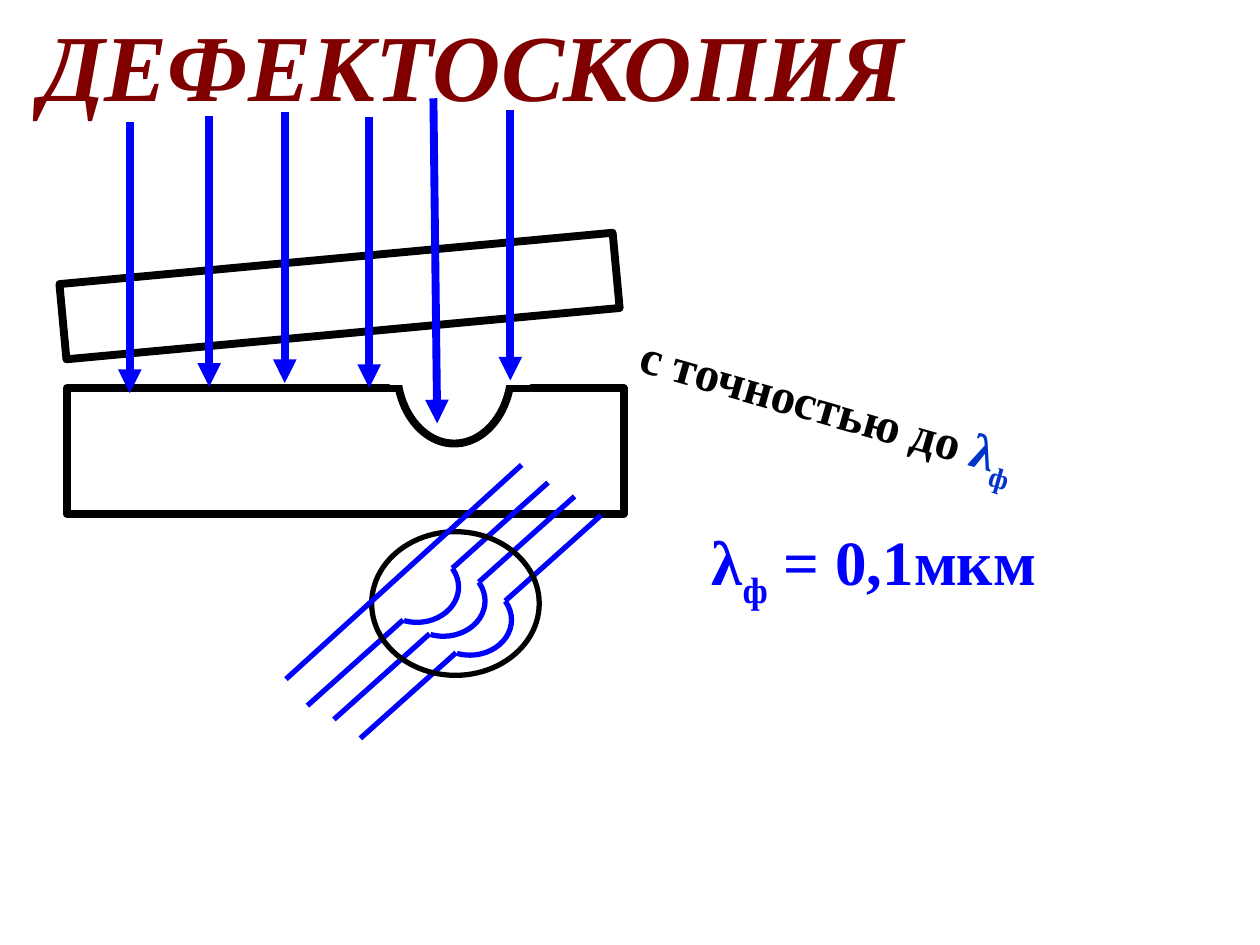
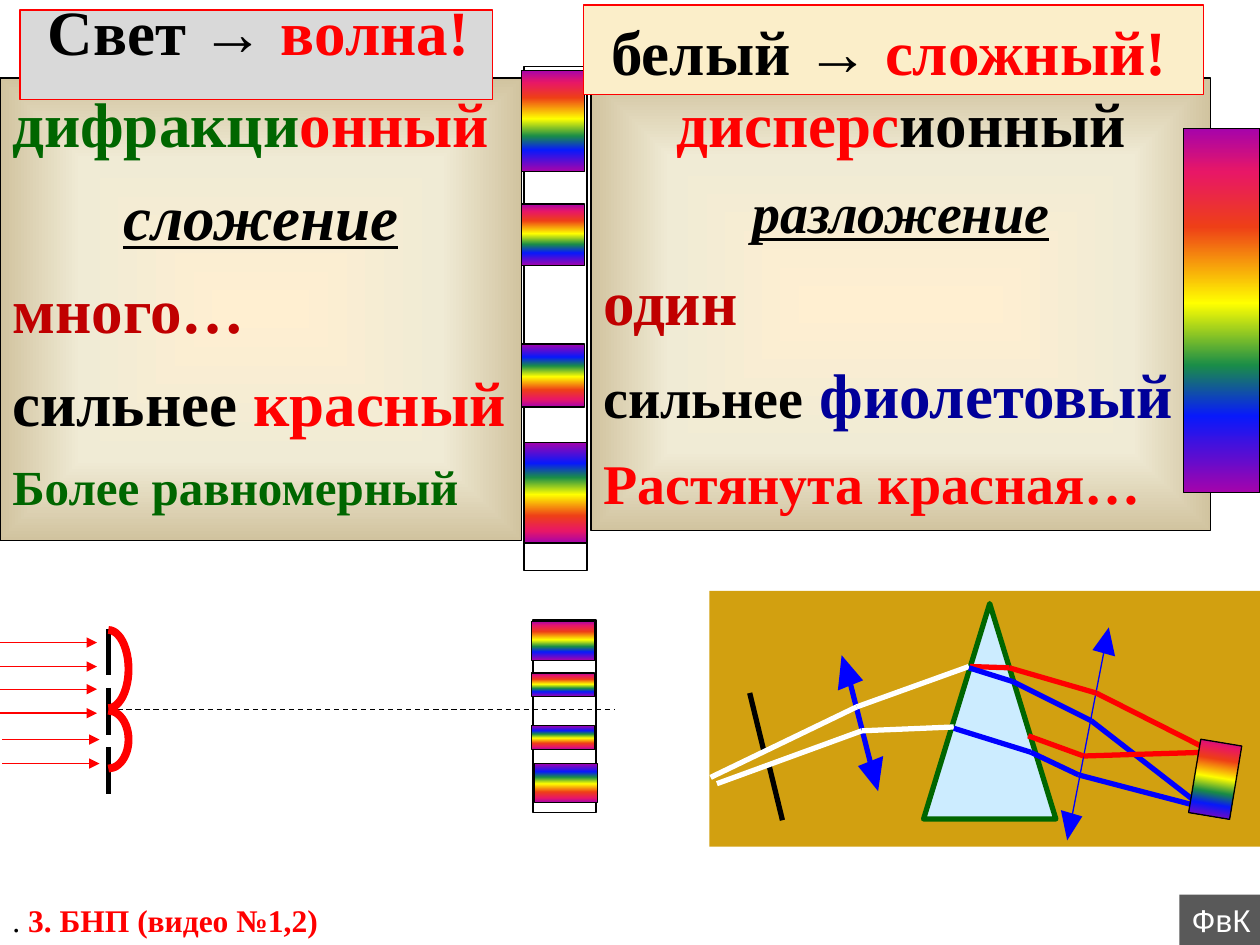
from dataclasses import dataclass
from itertools import pairwise

from lxml.etree import SubElement
from pptx import Presentation
from pptx.dml.color import RGBColor
from pptx.enum.dml import MSO_LINE_DASH_STYLE as Dash
from pptx.enum.shapes import MSO_CONNECTOR as Connector, MSO_SHAPE as Preset
from pptx.enum.text import MSO_ANCHOR as Anchor, PP_ALIGN as Align
from pptx.oxml.ns import qn
from pptx.util import Inches, Pt


@dataclass(frozen=True)
class Theme:
    """Colours, fonts, type sizes and line weights of both slides."""
    black: str = "000000"
    white: str = "FFFFFF"
    red: str = "FF0000"
    blue: str = "0000FF"
    green: str = "006600"
    crimson: str = "C00000"
    maroon: str = "800000"
    navy: str = "000099"
    lambda_blue: str = "0033CC"
    header_grey: str = "D9D9D9"
    header_cream: str = "FBEEC9"
    badge: str = "595959"
    bench: str = "D2A010"
    glass: str = "CCECFF"
    serif: str = "Times New Roman"
    sans: str = "Arial"
    title: int = 54
    large: int = 36
    medium: int = 32
    small: int = 28
    note: int = 18
    hair: float = 0.75
    ray: float = 3
    heavy: float = 4.5


T = Theme()
PARCHMENT = [(0, "FFEFD1"), (65, "F0EBD5"), (100, "D1C39F")]
VIOLET_FIRST = [(0, "A603AB"), (21, "0819FB"), (35, "1A8D48"), (52, "FFFF00"),
                (73, "EE3F17"), (88, "E81766"), (100, "A603AB")]
RED_FIRST = [(100 - position, color) for position, color in reversed(VIOLET_FIRST)]


def rgb(color):
    """Turn a hex string into a colour."""
    return RGBColor.from_string(color)


def paint_gradient(shape, stops, radial=False):
    """Fill a shape with a top-down or centre-out gradient."""
    shape.fill.gradient()
    gradient = shape._element.spPr.find(qn("a:gradFill"))
    for part in list(gradient):
        gradient.remove(part)
    stop_list = SubElement(gradient, qn("a:gsLst"))
    for position, color in stops:
        stop = SubElement(stop_list, qn("a:gs"), pos=str(position * 1000))
        SubElement(stop, qn("a:srgbClr"), val=color)
    if radial:
        center = SubElement(gradient, qn("a:path"), path="shape")
        SubElement(center, qn("a:fillToRect"), l="50000", t="50000", r="50000", b="50000")
    else:
        SubElement(gradient, qn("a:lin"), ang="5400000", scaled="0")


def dress(shape, fill, line, width):
    """Set fill, outline and absence of shadow."""
    shape.shadow.inherit = False
    if isinstance(fill, list):
        paint_gradient(shape, fill, radial=fill is PARCHMENT)
    elif fill:
        shape.fill.solid()
        shape.fill.fore_color.rgb = rgb(fill)
    else:
        shape.fill.background()
    if line:
        shape.line.color.rgb = rgb(line)
        shape.line.width = Pt(width)
    else:
        shape.line.fill.background()


def write(frame, paragraphs, anchor=Anchor.TOP, wrap=True, after=0):
    """Write paragraphs given as an alignment and a list of run tuples."""
    frame.word_wrap = wrap
    frame.vertical_anchor = anchor
    for index, (align, runs) in enumerate(paragraphs):
        paragraph = frame.paragraphs[0] if index == 0 else frame.add_paragraph()
        paragraph.alignment = align
        paragraph.space_after = Pt(after)
        for text, size, color, *style in runs:
            run = paragraph.add_run()
            run.text = text
            font = run.font
            font.size, font.color.rgb = Pt(size), rgb(color)
            font.name = T.sans if "sans" in style else T.serif
            font.bold = "plain" not in style
            font.italic = "italic" in style
            font.underline = "underline" in style
            if "sub" in style:
                run._r.get_or_add_rPr().set("baseline", "-28000")


@dataclass
class Region:
    """A part of a slide whose drawing calls are relative to its corner."""
    slide: object
    left: float = 0
    top: float = 0

    def place(self, x, y):
        """Convert a local point to slide lengths."""
        return Inches(self.left + x), Inches(self.top + y)

    def shape(self, x, y, width, height, fill=None, line=None, weight=T.hair,
              preset=Preset.RECTANGLE, rotation=0):
        """Add a preset shape."""
        shape = self.slide.shapes.add_shape(
            preset, *self.place(x, y), Inches(width), Inches(height))
        shape.rotation = rotation
        dress(shape, fill, line, weight)
        return shape

    def line(self, start, end, color, weight, arrow=False, dashed=False):
        """Add a straight line, with an arrowhead at its end if wanted."""
        line = self.slide.shapes.add_connector(
            Connector.STRAIGHT, *self.place(*start), *self.place(*end))
        line.line.color.rgb = rgb(color)
        line.line.width = Pt(weight)
        if dashed:
            line.line.dash_style = Dash.DASH
        if arrow:
            SubElement(line.line._get_or_add_ln(), qn("a:tailEnd"), type="triangle")
        SubElement(line._element.spPr, qn("a:effectLst"))

    def arc(self, center, radii, start, end, color, weight):
        """Add an elliptic arc running clockwise between two angles."""
        (x, y), (rx, ry) = center, radii
        arc = self.shape(x - rx, y - ry, 2 * rx, 2 * ry, None, color, weight, Preset.ARC)
        for index, angle in enumerate((start, end)):
            arc.adjustments[index] = angle * 0.6

    def polygon(self, points, fill):
        """Add a closed, filled outline."""
        first, *others = [self.place(*point) for point in points]
        builder = self.slide.shapes.build_freeform(*first)
        builder.add_line_segments(others)
        dress(builder.convert_to_shape(), fill, None, 0)

    def label(self, width, height, runs, rotation=0, **options):
        """Add a one-paragraph text box at the corner."""
        box = self.slide.shapes.add_textbox(
            *self.place(0, 0), Inches(width), Inches(height))
        box.rotation = rotation
        write(box.text_frame, [(Align.LEFT, runs)], **options)


def title(slide, text):
    """Place and format the title placeholder."""
    holder = slide.shapes.title
    holder.left, holder.top = Inches(0.22), Inches(0)
    holder.width, holder.height = Inches(7.13), Inches(1.01)
    write(holder.text_frame, [(Align.LEFT, [(text, T.title, T.maroon, "italic")])],
          Anchor.MIDDLE, wrap=False)


def tested_plates(region):
    """Draw the tilted plate and the plate with a pit."""
    region.shape(0, 0, 4.41, 0.6, T.white, T.black, T.heavy, rotation=354.7)
    region.shape(0.04, 1.03, 4.42, 1, T.white, T.black, T.heavy)
    pit = region.shape(2.82, 0.72, 0.59, 0.91, T.white, T.black, T.heavy, Preset.MOON, 270)
    pit.adjustments[0] = 0.875
    region.shape(2.61, 0.86, 1.1, 0.13, T.white, T.white, 2)


def falling_light(region):
    """Draw the beams that fall on the plates."""
    for x, y in [(0, 0.19), (0.63, 0.14), (1.23, 0.11), (1.9, 0.15), (3.02, 0.09)]:
        region.line((x, y), (x, y + 2.15), T.blue, T.heavy, arrow=True)
    region.line((2.41, 0), (2.44, 2.58), T.blue, T.heavy, arrow=True)


def bent_fringes(region):
    """Draw interference fringes that bend around the pit."""
    for dx, dy in [(0, 0), (0.21, 0.11), (0.42, 0.26)]:
        fringe = Region(region.slide, region.left + dx, region.top + dy)
        fringe.line((0.17, 1.91), (0.93, 1.23), T.blue, T.ray)
        fringe.line((1.32, 0.82), (2.08, 0.14), T.blue, T.ray)
        fringe.arc((1.04, 0.97), (0.33, 0.28), 332, 111, T.blue, T.ray)
    region.shape(0.68, 0.53, 1.33, 1.14, None, T.black, T.ray, Preset.OVAL)
    region.line((0, 1.7), (1.87, 0), T.blue, T.ray)


def flaw_detection_slide(deck):
    """Build the slide on flaw detection."""
    slide = deck.slides.add_slide(deck.slide_layouts[5])
    title(slide, "ДЕФЕКТОСКОПИЯ")
    tested_plates(Region(slide, 0.49, 2.05))
    falling_light(Region(slide, 1.03, 0.78))
    bent_fringes(Region(slide, 2.27, 3.69))
    Region(slide, 4.94, 2.95).label(3.35, 0.57, [
        ("с точностью до ", T.small, T.black), ("λ", T.small, T.lambda_blue),
        ("ф", T.small, T.lambda_blue, "sub")], rotation=15.9, wrap=False)
    Region(slide, 5.55, 4.14).label(2.97, 0.71, [
        ("λ", T.large, T.blue), ("ф", T.large, T.blue, "sub"),
        (" = 0,1мкм", T.large, T.blue)], anchor=Anchor.MIDDLE)


def spectrum_panel(region, width, height, paragraphs):
    """Draw a parchment panel listing the features of a spectrum."""
    panel = region.shape(0, 0, width, height, PARCHMENT, T.black)
    write(panel.text_frame, paragraphs, after=10)


def header(region, width, fill, subject, verdict, bottom_inset=0.05):
    """Draw a framed statement above a panel."""
    box = region.shape(0, 0, width, 0.71, fill, T.red)
    box.text_frame.margin_left = Inches(0.22)
    box.text_frame.margin_bottom = Inches(bottom_inset)
    write(box.text_frame, [(Align.LEFT, [
        (f"{subject} → ", T.large, T.black), (verdict, T.large, T.red)])], Anchor.MIDDLE)


def spectrum_column(region, height, bands):
    """Draw a screen with spectra mirrored about its middle."""
    region.shape(0, 0, 0.5, height, T.white, T.black)
    for index, (x, y, band_height) in enumerate(bands):
        stops = RED_FIRST if index < len(bands) / 2 else VIOLET_FIRST
        region.shape(x, y, 0.5, band_height, stops, T.black)


def grating(region):
    """Draw the slits, the incoming light, the axis and the wavelets."""
    for index in range(3):
        slit_top = 0.47 * index
        region.line((0.86, slit_top), (0.86, slit_top + 0.37), T.black, T.ray)
    for x, y in [(0, 0.11), (0, 0.3), (0, 0.48), (0, 0.67), (0.02, 0.88), (0.02, 1.07)]:
        region.line((x, y), (x + 0.77, y), T.red, T.hair, arrow=True)
    region.line((0.86, 0.64), (4.88, 0.64), T.black, T.hair, dashed=True)
    for middle, radius in [(0.32, 0.31), (0.88, 0.23)]:
        region.arc((0.86, middle), (0.16, radius), 270, 90, T.red, T.heavy)


def prism_bench(region):
    """Draw the prism, the lenses and the rays split by colour."""
    region.shape(0, 0, 4.37, 2.03, T.bench)
    region.shape(1.7, 0.1, 1.05, 1.71, T.glass, T.green, T.ray, Preset.ISOSCELES_TRIANGLE)
    region.line((1.12, 0.74), (1.28, 1.37), T.blue, T.ray)
    region.line((3.13, 0.49), (2.88, 1.78), T.blue, T.hair)
    for arrowhead in [[(1.22, 0.71), (1.05, 0.51), (1.02, 0.79)],
                      [(1.18, 1.39), (1.34, 1.59), (1.38, 1.31)],
                      [(3.22, 0.52), (3.17, 0.29), (3.04, 0.47)],
                      [(2.79, 1.74), (2.84, 1.98), (2.96, 1.79)]]:
        region.polygon(arrowhead, T.blue)
    rays = [
        (T.black, [(0.32, 0.81), (0.43, 1.26)]),
        (T.black, [(0.47, 1.37), (0.58, 1.82)]),
        (T.white, [(0.01, 1.48), (1.17, 0.92), (2.06, 0.6)]),
        (T.white, [(0.06, 1.53), (1.21, 1.11), (1.94, 1.08)]),
        (T.red, [(2.07, 0.6), (2.38, 0.61), (3.07, 0.81), (3.94, 1.25)]),
        (T.blue, [(2.06, 0.61), (2.41, 0.72), (3.03, 1.03), (3.92, 1.72)]),
        (T.blue, [(1.94, 1.09), (2.55, 1.28), (2.93, 1.46), (3.96, 1.73)]),
        (T.red, [(2.53, 1.15), (2.97, 1.31), (3.96, 1.28)]),
    ]
    for color, points in rays:
        for start, end in pairwise(points):
            region.line(start, end, color, T.ray)
    region.shape(3.85, 1.2, 0.33, 0.59, RED_FIRST, T.black, rotation=9.4)


def footer(region):
    """Write the footnote and the corner badge."""
    region.label(2.65, 0.4, [(". ", T.note, T.black, "plain"),
                             ("3. БНП (видео №1,2)", T.note, T.red)], wrap=False)
    badge = region.shape(9.36, 0, 0.64, 0.4, T.badge)
    write(badge.text_frame, [(Align.LEFT, [("ФвК", T.note, T.white, "plain", "sans")])],
          wrap=False)


def spectra_slide(deck):
    """Build the slide comparing diffraction and dispersion spectra."""
    slide = deck.slides.add_slide(deck.slide_layouts[6])
    spectrum_panel(Region(slide, 0, 0.62), 4.14, 3.67, [
        (Align.LEFT, [("дифракци", T.large, T.green), ("онный", T.large, T.red)]),
        (Align.CENTER, [("сложение", T.large, T.black, "italic", "underline")]),
        (Align.LEFT, [("много…", T.large, T.crimson)]),
        (Align.LEFT, [("сильнее ", T.large, T.black), ("красный", T.large, T.red)]),
        (Align.LEFT, [("Более равномерный", T.small, T.green)])])
    spectrum_panel(Region(slide, 4.69, 0.62), 4.92, 3.59, [
        (Align.CENTER, [("дисперс", T.large, T.red), ("ионный", T.large, T.black)]),
        (Align.CENTER, [("разложение", T.medium, T.black, "italic", "underline")]),
        (Align.LEFT, [("один", T.large, T.crimson)]),
        (Align.LEFT, [("сильнее", T.medium, T.black), (" ", T.large, T.black),
                      ("фиолетовый", T.large, T.navy)]),
        (Align.LEFT, [("Растянута красная…", T.medium, T.red)])])
    spectrum_column(Region(slide, 4.16, 0.53), 4, [
        (-0.02, 0.03, 0.8), (-0.02, 1.09, 0.49), (-0.02, 2.2, 0.5), (0, 2.98, 0.8)])
    Region(slide, 9.39, 1.02).shape(0, 0, 0.61, 2.89, RED_FIRST, T.black)
    header(Region(slide, 0.16, 0.08), 3.75, T.header_grey, "Свет", "волна!", 0.44)
    header(Region(slide, 4.63, 0.04), 4.92, T.header_cream, "белый", "сложный!")
    spectrum_column(Region(slide, 4.23, 4.92), 1.53, [
        (-0.01, 0.01, 0.31), (-0.01, 0.42, 0.19), (-0.01, 0.84, 0.19), (0.01, 1.14, 0.31)])
    grating(Region(slide, 0, 4.99))
    prism_bench(Region(slide, 5.63, 4.69))
    footer(Region(slide, 0, 7.1))


def main():
    """Build and save the deck."""
    deck = Presentation()
    deck.slide_width, deck.slide_height = Inches(10), Inches(7.5)
    flaw_detection_slide(deck)
    spectra_slide(deck)
    deck.save("out.pptx")


if __name__ == "__main__":
    main()
